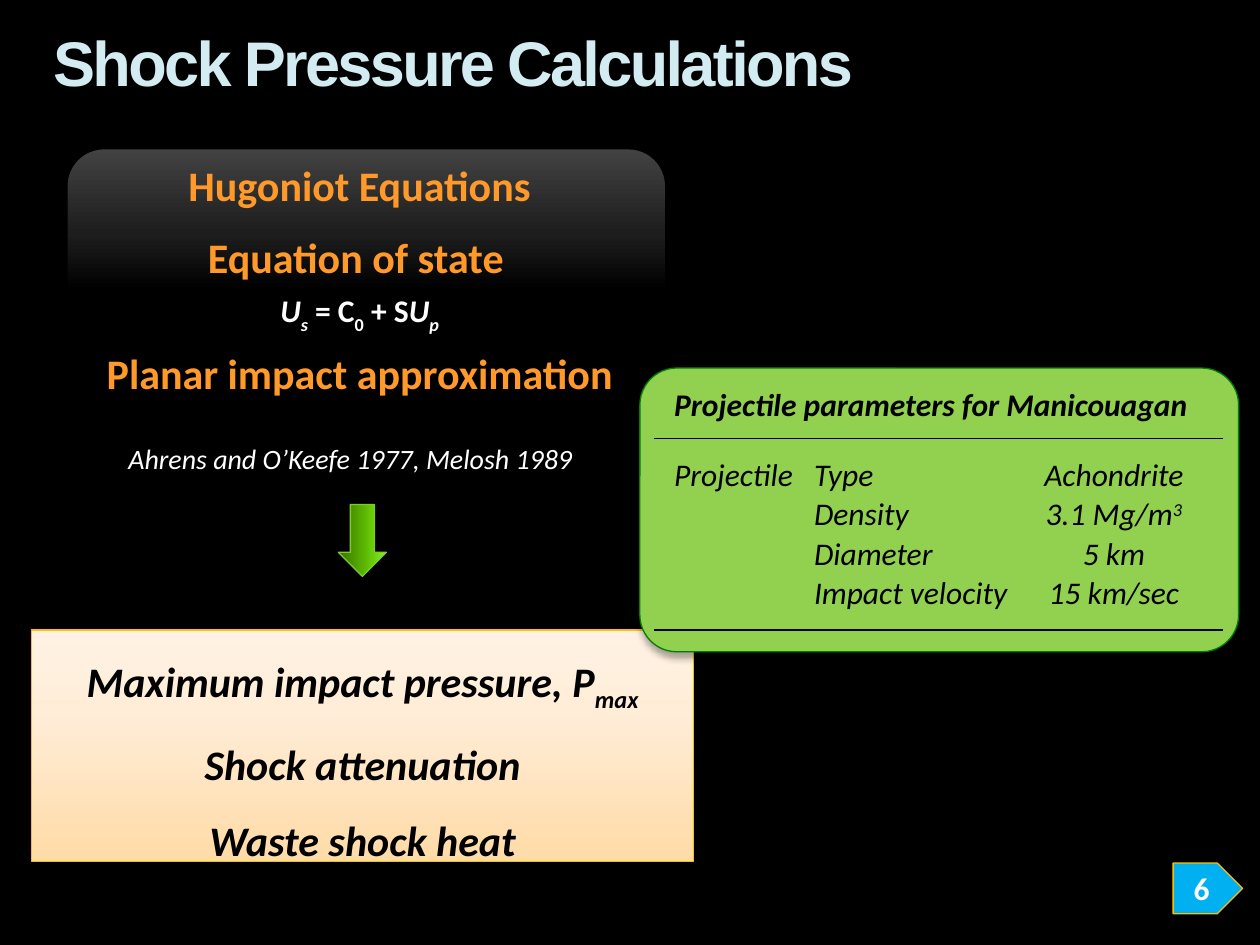
import typing

import lxml.etree
import pptx
import pptx.dml.color
import pptx.enum.shapes
import pptx.enum.text
import pptx.oxml.ns
import pptx.util

Cm = pptx.util.Cm
Pt = pptx.util.Pt
Kind = pptx.enum.shapes.MSO_SHAPE
Align = pptx.enum.text.PP_ALIGN
Anchor = pptx.enum.text.MSO_ANCHOR
qn = pptx.oxml.ns.qn

HUES = {
    "black": "000000", "white": "FFFFFF", "title": "D3ECF2", "head": "FF9929",
    "gold": "FFC000", "leaf": "92D050", "edge": "008000", "lime": "7DCC2E",
    "sky": "00B0F0",
}
CREAM = [(0, "FFDBA7"), (65, "FFEDD8"), (100, "FFF2E4")]
NIGHT = [(0, "000000"), (50, "000000"), (70, "1D1D1D"), (100, "424242")]
GRASS = [(0, "376E00"), (50, "58B100"), (70, "68CC0B"), (100, "83F229")]


class Box(typing.NamedTuple):
    left: float
    top: float
    wide: float
    high: float

    def spans(self) -> list:
        return [Cm(side) for side in self]


class Bit(typing.NamedTuple):
    text: str
    base: int = 0
    ital: bool = False


class Look(typing.NamedTuple):
    size: float
    hue: str
    bold: bool = False
    ital: bool = False
    face: str = "Calibri"


class Label(typing.NamedTuple):
    box: Box
    bits: list
    look: Look


def color(name: str) -> pptx.dml.color.RGBColor:
    return pptx.dml.color.RGBColor.from_string(HUES[name])


def style(run, look: Look) -> None:
    font = run.font
    font.name, font.size = look.face, Pt(look.size)
    font.bold, font.italic = look.bold, look.ital
    font.color.rgb = color(look.hue)


def write(para, bits: list, look: Look, align=Align.CENTER) -> None:
    para.alignment = align
    para.text = bits[0].text
    for bit in bits[1:]:
        para.add_run().text = bit.text
    for run, bit in zip(para.runs, bits):
        style(run, look._replace(ital=look.ital or bit.ital))
        if bit.base:
            run._r.get_or_add_rPr().set("baseline", str(bit.base * 1000))


def strip(frame, anchor) -> None:
    frame.margin_left = frame.margin_right = 0
    frame.margin_top = frame.margin_bottom = 0
    frame.vertical_anchor = anchor
    frame.auto_size = pptx.enum.text.MSO_AUTO_SIZE.NONE
    frame.word_wrap = True


def place(shape, box: Box) -> None:
    shape.left, shape.top, shape.width, shape.height = box.spans()


def shade(shape, stops: list) -> None:
    shape.fill.gradient()
    shape.fill.gradient_angle = 90
    ramp = shape._element.spPr.find(".//" + qn("a:gsLst"))
    for stop in list(ramp):
        ramp.remove(stop)
    for spot, tone in stops:
        stop = lxml.etree.SubElement(ramp, qn("a:gs"), pos=str(spot * 1000))
        lxml.etree.SubElement(stop, qn("a:srgbClr"), val=tone)


def trim(shape, edge: str, cast: bool = True) -> None:
    shape.line.color.rgb = color(edge)
    shape.line.width = Pt(0.75)
    shape.shadow.inherit = False
    if cast:
        glow = lxml.etree.SubElement(
            shape._element.spPr.find(qn("a:effectLst")), qn("a:outerShdw"),
            blurRad=str(Pt(4)), dist=str(Pt(3)), dir="5400000", rotWithShape="0")
        tone = lxml.etree.SubElement(glow, qn("a:srgbClr"), val=HUES["black"])
        lxml.etree.SubElement(tone, qn("a:alpha"), val="35000")


def panel(shapes, box: Box, edge: str):
    shape = shapes.add_shape(Kind.ROUNDED_RECTANGLE, *box.spans())
    shape.adjustments[0] = 0.13
    trim(shape, edge)
    return shape


def label(shapes, item: Label) -> None:
    frame = shapes.add_textbox(*item.box.spans()).text_frame
    frame.word_wrap = False
    write(frame.paragraphs[0], item.bits, item.look)


def rule(cell) -> None:
    line = lxml.etree.Element(qn("a:lnB"), w=str(Pt(1)))
    fill = lxml.etree.SubElement(line, qn("a:solidFill"))
    lxml.etree.SubElement(fill, qn("a:srgbClr"), val=HUES["black"])
    cell._tc.get_or_add_tcPr().insert(0, line)


def grid(shapes, box: Box, cols: list, rows: list, texts: dict) -> None:
    table = shapes.add_table(len(rows), len(cols), *box.spans()).table
    table.first_row = table.horz_banding = False
    plain = "{2D5ABB26-0587-4C30-8999-92F81FD0307C}"
    table._tbl.tblPr.find(qn("a:tableStyleId")).text = plain
    for col, wide in zip(table.columns, cols):
        col.width = Cm(wide)
    for row, high in zip(table.rows, rows):
        row.height = Cm(high)
    table.cell(0, 1).merge(table.cell(0, len(cols) - 1))
    for y in range(len(rows)):
        for x in range(len(cols)):
            cell = table.cell(y, x)
            cell.fill.background()
            cell.margin_left = cell.margin_right = cell.margin_top = Cm(0.03)
            cell.margin_bottom = 0
            cell.vertical_anchor = Anchor.MIDDLE if y else Anchor.TOP
            para = cell.text_frame.paragraphs[0]
            if (y, x) in texts:
                look = Look(18, "black", bold=y == 0, ital=True)
                align = Align.CENTER if x == 3 else Align.LEFT
                write(para, texts[y, x], look, align)
            else:
                lxml.etree.SubElement(para._p, qn("a:endParaRPr"), sz="400")
            if y in (0, len(rows) - 1):
                rule(cell)


def main() -> None:
    deck = pptx.Presentation()
    deck.slide_width, deck.slide_height = Cm(25.4), Cm(19.05)
    slide = deck.slides.add_slide(deck.slide_layouts[1])
    slide.background.fill.solid()
    slide.background.fill.fore_color.rgb = color("black")
    shapes = slide.shapes

    title = shapes.title
    place(title, Box(1.07, 0.64, 23.29, 1.4))
    strip(title.text_frame, Anchor.TOP)
    para = title.text_frame.paragraphs[0]
    write(para, [Bit("Shock Pressure Calculations")],
          Look(36, "title", bold=True, face="Arial"), Align.LEFT)
    para.line_spacing = 0.9
    para.runs[0]._r.get_or_add_rPr().set("spc", "-150")

    body = slide.placeholders[1]
    place(body, Box(0.64, 12.7, 13.34, 4.67))
    shade(body, CREAM)
    trim(body, "gold")
    frame = body.text_frame
    strip(frame, Anchor.MIDDLE)
    goals = [[Bit("Maximum impact pressure, P"), Bit("max", -25)],
             [Bit("Shock attenuation")], [Bit("Waste shock heat")]]
    frame.text = "\n".join(goal[0].text for goal in goals)
    for para, goal in zip(frame.paragraphs, goals):
        props = para._p.get_or_add_pPr()
        props.set("marL", "0")
        props.set("indent", "0")
        lxml.etree.SubElement(props, qn("a:buNone"))
        para.line_spacing, para.space_before = 1.5, Pt(0)
        write(para, goal, Look(24, "black", bold=True, ital=True))

    group = shapes.add_group_shape().shapes
    shade(panel(group, Box(1.35, 3, 12.07, 5.72), "black"), NIGHT)
    head = Look(24, "head", bold=True)
    law = [Bit("U", 0, True), Bit("s", -30, True), Bit(" = C"), Bit("0", -30),
           Bit(" + S"), Bit("U", 0, True), Bit("p", -30, True)]
    for item in (
        Label(Box(3.07, 3.1, 8.36, 1.27), [Bit("Hugoniot Equations")], head),
        Label(Box(4.95, 5.74, 4.6, 1.02), law, Look(18, "white", bold=True)),
        Label(Box(3.51, 4.55, 7.52, 1.27), [Bit("Equation of state ")], head),
        Label(Box(1.22, 6.88, 12.07, 1.27), [Bit("Planar impact approximation")], head),
    ):
        label(group, item)

    card = panel(shapes, Box(12.9, 7.42, 12.07, 5.72), "edge")
    card.fill.solid()
    card.fill.fore_color.rgb = color("leaf")

    arrow = shapes.add_shape(Kind.RIGHT_ARROW, *Box(6.58, 10.41, 1.45, 0.97).spans())
    arrow.rotation = 90
    shade(arrow, GRASS)
    trim(arrow, "lime")

    cite = shapes.add_textbox(*Box(2.59, 8.89, 9.4, 0.69).spans()).text_frame
    strip(cite, Anchor.MIDDLE)
    write(cite.paragraphs[0], [Bit("Ahrens and O’Keefe 1977, Melosh 1989")],
          Look(16, "white", ital=True), Align.LEFT)

    texts = {(0, 1): [Bit("Projectile parameters for Manicouagan")],
             (2, 1): [Bit("Projectile")]}
    facts = [("Type", [Bit("Achondrite")]),
             ("Density", [Bit("3.1 Mg/m"), Bit("3", 30)]),
             ("Diameter", [Bit("5 km")]),
             ("Impact velocity", [Bit("15 km/sec")])]
    for y, (name, fact) in enumerate(facts, 2):
        texts[y, 2], texts[y, 3] = [Bit(name)], fact
    grid(shapes, Box(13.18, 7.77, 11.48, 4.98), [0.38, 2.82, 4.17, 3.81, 0.3],
         [1.07, 0.33] + [0.79] * 4 + [0.36], texts)

    badge = shapes.add_shape(Kind.PENTAGON, *Box(23.65, 17.4, 1.4, 1.02).spans())
    badge.fill.solid()
    badge.fill.fore_color.rgb = color("sky")
    trim(badge, "gold", cast=False)
    badge.text_frame.word_wrap = False
    write(badge.text_frame.paragraphs[0], [Bit("6")], Look(18, "white", bold=True))

    deck.save("out.pptx")


if __name__ == "__main__":
    main()
